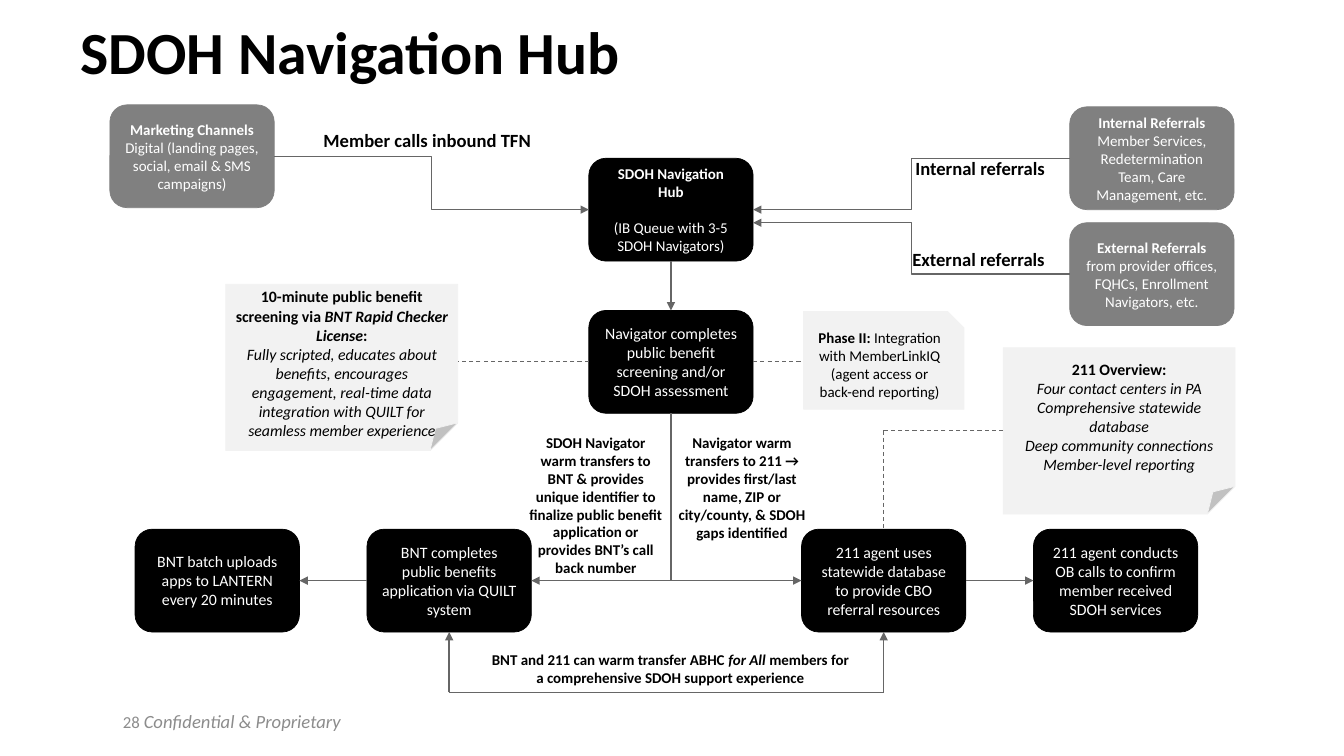
"""Build the SDOH Navigation Hub flow slide."""
from dataclasses import dataclass
from typing import NamedTuple, Optional, Union

from lxml.etree import SubElement
from pptx import Presentation
from pptx.dml.color import RGBColor
from pptx.enum.dml import MSO_LINE
from pptx.enum.shapes import MSO_CONNECTOR, MSO_SHAPE
from pptx.enum.text import MSO_ANCHOR, PP_ALIGN
from pptx.oxml.ns import qn
from pptx.util import Inches, Pt

COLORS = {"black": "000000", "white": "FFFFFF", "gray": "808080",
          "note": "F2F2F2", "line": "666666", "footer": "8C8C8C"}
FONT = "Calibri"
BOX_W, BOX_H = 1.63, 1.02
HUB_X, ROW_Y, REFERRAL_X = 5.84, 5.25, 10.61
LANE_Y, BRACKET_Y = ROW_Y + BOX_H / 2, 6.87
BDT_X, AGENT_X = 3.64 + BOX_W / 2, 7.95 + BOX_W / 2
TOP, LEFT, BOTTOM, RIGHT = range(4)


class Run(NamedTuple):
    text: str
    style: str = ""
    size: Optional[float] = None


class Site(NamedTuple):
    box: str
    side: int


class Point(NamedTuple):
    x: float
    y: float


End = Union[Site, Point]


@dataclass
class Node:
    name: str
    x: float
    y: float
    paras: list[list[Run]]
    size: float = 11.3
    fill: str = "black"
    font: str = "white"
    w: float = BOX_W
    h: float = BOX_H
    kind: MSO_SHAPE = MSO_SHAPE.ROUNDED_RECTANGLE
    top_inset: float = 0.05
    gap: float = 0


@dataclass
class Label:
    x: float
    y: float
    w: float
    h: float
    runs: list[Run]
    size: float = 10.7
    color: str = "black"
    align: PP_ALIGN = PP_ALIGN.CENTER
    wrap: bool = True
    anchor: MSO_ANCHOR = MSO_ANCHOR.TOP
    inset: tuple[float, float] = (0.1, 0.05)
    spacing: float = 1.0


@dataclass
class Link:
    begin: End
    end: End
    head: bool = False
    tail: bool = True
    dash: bool = False
    elbow: bool = False


def note(name: str, x: float, y: float, paras: list[list[Run]], **extra) -> Node:
    """Return a folded-corner note."""
    return Node(name, x, y, paras, fill="note", font="black", w=2.3, h=1.65,
                kind=MSO_SHAPE.FOLDED_CORNER, **extra)


def caption(x: float, y: float, w: float, text: str) -> Label:
    """Return a one-line arrow caption."""
    return Label(x, y, w, 0.33, [Run(text, "b")], 13.3, align=PP_ALIGN.LEFT, wrap=False)


NODES = [
    Node("marketing", 1.09, 1.04, [[Run("Marketing Channels", "b")],
         [Run("Digital (landing pages, social, email & SMS campaigns)")]], 10.7, "gray"),
    Node("hub", HUB_X, 1.57, [[Run("SDOH Navigation Hub", "b")],
         [Run("(IB Queue with 3-5 SDOH Navigators)")]], 10.7, gap=13),
    Node("navigator", HUB_X, 3.08, [[Run(
        "Navigator completes public benefit screening and/or SDOH assessment")]]),
    Node("internal", REFERRAL_X, 1.06, [[Run("Internal Referrals ", "b"), Run(
        "Member Services, Redetermination Team, Care Management, etc.")]], 10.7, "gray"),
    Node("external", REFERRAL_X, 2.21, [[Run("External Referrals ", "b"), Run(
        "from provider offices, FQHCs, Enrollment Navigators, etc.")]], 10.7, "gray"),
    Node("batch", 1.34, ROW_Y, [[Run("BNT batch uploads apps to LANTERN every 20 minutes")]]),
    Node("application", 3.64, ROW_Y, [[Run(
        "BNT completes public benefits application via QUILT system")]]),
    Node("agent", 7.95, ROW_Y, [[Run(
        "211 agent uses statewide database to provide CBO referral resources")]]),
    Node("calls", 10.25, ROW_Y, [[Run(
        "211 agent conducts OB calls to confirm member received SDOH services")]]),
    note("screening", 2.24, 2.82, [
        [Run("10-minute public benefit screening via ", "b"),
         Run("BNT Rapid Checker License", "bi"), Run(":", "b")],
        [Run("Fully scripted, educates about benefits, encourages engagement, real-time "
             "data integration with QUILT for seamless member experience", "i")]],
        top_inset=0.24),
    note("overview", 9.95, 3.45, [
        [Run("211 Overview:", "b")], [Run("Four contact centers in PA", "i")],
        [Run("Comprehensive statewide database", "i")],
        [Run("Deep community connections", "i")], [Run("Member-level reporting", "i")]]),
    Node("phase", 7.97, 3.09, [[Run("Phase II: ", "b"), Run(
        "Integration with MemberLinkIQ (agent access or back-end reporting)")]],
        10.7, "note", "black", 1.59, 0.97, MSO_SHAPE.SNIP_1_RECTANGLE),
]
LABELS = [
    Label(0.67, 0.16, 12, 1.25, [Run("SDOH Navigation Hub", "b")], 42.7,
          align=PP_ALIGN.LEFT, inset=(0.13, 0.07), spacing=0.9),
    caption(3.11, 1.23, 2.28, "Member calls inbound TFN"),
    caption(8.98, 1.51, 1.51, "Internal referrals"),
    caption(8.95, 2.41, 1.54, "External referrals"),
    Label(4.73, 6.41, 3.84, 0.46, [
        Run("BNT and 211 can warm transfer ABHC ", "b"), Run("for All ", "bi"),
        Run("members for a comprehensive SDOH support experience", "b")]),
    Label(6.58, 4.25, 1.56, 1.18, [Run(
        "Navigator warm transfers to 211 → provides first/last name, ZIP or city/county, "
        "& SDOH gaps identified", "b")]),
    Label(5.13, 4.25, 1.56, 1.54, [Run(
        "SDOH Navigator warm transfers to BNT & provides unique identifier to finalize "
        "public benefit application or provides BNT’s call back number", "b")]),
    Label(0.37, 6.95, 3.11, 0.4, [Run("28 ", "", 12), Run("Confidential & Proprietary", "i")],
          13.3, "footer", PP_ALIGN.RIGHT, anchor=MSO_ANCHOR.MIDDLE),
]
LINKS = [
    Link(Site("marketing", RIGHT), Site("hub", LEFT), elbow=True),
    Link(Site("internal", LEFT), Site("hub", RIGHT), elbow=True),
    Link(Site("external", LEFT), Point(HUB_X + BOX_W, 2.21), elbow=True),
    Link(Site("hub", BOTTOM), Site("navigator", TOP)),
    Link(Site("navigator", BOTTOM), Point(HUB_X + BOX_W / 2, LANE_Y), tail=False),
    Link(Site("application", RIGHT), Site("agent", LEFT), head=True),
    Link(Site("application", LEFT), Site("batch", RIGHT)),
    Link(Site("agent", RIGHT), Site("calls", LEFT)),
    Link(Site("navigator", LEFT), Point(4.54, 3.59), tail=False, dash=True),
    Link(Site("navigator", RIGHT), Point(7.97, 3.59), tail=False, dash=True),
    Link(Point(9.95, 4.27), Point(AGENT_X, 4.27), tail=False, dash=True),
    Link(Point(AGENT_X, 4.27), Site("agent", TOP), tail=False, dash=True),
    Link(Point(BDT_X, BRACKET_Y), Point(AGENT_X, BRACKET_Y), tail=False),
    Link(Point(BDT_X, BRACKET_Y), Site("application", BOTTOM)),
    Link(Point(AGENT_X, BRACKET_Y), Site("agent", BOTTOM)),
]


def rgb(name: str) -> RGBColor:
    return RGBColor.from_string(COLORS[name])


def write(p, runs: list[Run], size: float, color: str, align: PP_ALIGN) -> None:
    p.alignment = align
    for run in runs:
        r = p.add_run()
        r.text = run.text
        r.font.name, r.font.size = FONT, Pt(run.size or size)
        r.font.bold, r.font.italic = "b" in run.style, "i" in run.style
        r.font.color.rgb = rgb(color)


def draw_node(s, node: Node):
    sp = s.shapes.add_shape(node.kind, *map(Inches, (node.x, node.y, node.w, node.h)))
    sp.shadow.inherit = False
    sp.fill.solid()
    sp.fill.fore_color.rgb = sp.line.color.rgb = rgb(node.fill)
    sp.line.width = Pt(0.5)
    tf = sp.text_frame
    tf.word_wrap, tf.vertical_anchor = True, MSO_ANCHOR.MIDDLE
    tf.margin_top = Inches(node.top_inset)
    for i, runs in enumerate(node.paras):
        p = tf.add_paragraph() if i else tf.paragraphs[0]
        if i and node.gap:
            p.space_before = Pt(node.gap)
        write(p, runs, node.size, node.font, PP_ALIGN.CENTER)
    return sp


def draw_label(s, label: Label) -> None:
    sp = s.shapes.add_textbox(*map(Inches, (label.x, label.y, label.w, label.h)))
    tf = sp.text_frame
    tf.word_wrap, tf.vertical_anchor = label.wrap, label.anchor
    tf.margin_left = tf.margin_right = Inches(label.inset[0])
    tf.margin_top = tf.margin_bottom = Inches(label.inset[1])
    p = tf.paragraphs[0]
    p.line_spacing = label.spacing
    write(p, label.runs, label.size, label.color, label.align)


def draw_link(s, link: Link, boxes: dict) -> None:
    kind = MSO_CONNECTOR.ELBOW if link.elbow else MSO_CONNECTOR.STRAIGHT
    ends = [Point(0, 0) if isinstance(e, Site) else e for e in (link.begin, link.end)]
    cx = s.shapes.add_connector(kind, *(Inches(v) for e in ends for v in e))
    for end, join in ((link.begin, cx.begin_connect), (link.end, cx.end_connect)):
        if isinstance(end, Site):
            join(boxes[end.box], end.side)
    cx.line.color.rgb, cx.line.width = rgb("line"), Pt(0.75 if link.dash else 1)
    if link.dash:
        cx.line.dash_style = MSO_LINE.DASH
    ln = cx.line._get_or_add_ln()
    for tag, shown in (("a:headEnd", link.head), ("a:tailEnd", link.tail)):
        if shown:
            SubElement(ln, qn(tag), type="triangle")
    SubElement(cx._element.spPr, qn("a:effectLst"))


def main() -> None:
    prs = Presentation()
    prs.slide_width, prs.slide_height = Inches(13.33), Inches(7.5)
    s = prs.slides.add_slide(prs.slide_layouts[6])
    boxes = {node.name: draw_node(s, node) for node in NODES}
    for link in LINKS:
        draw_link(s, link, boxes)
    for label in LABELS:
        draw_label(s, label)
    prs.save("out.pptx")


if __name__ == "__main__":
    main()
